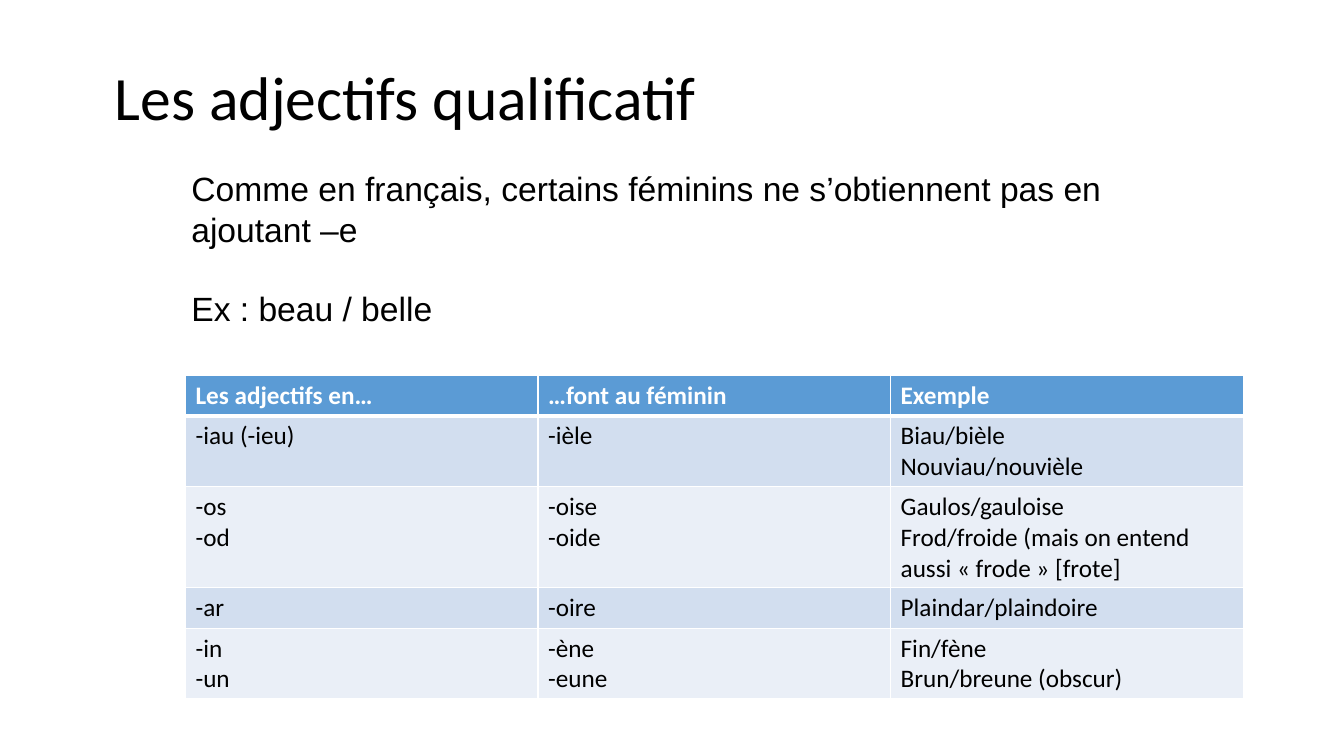
from lxml import etree
from pptx import Presentation
from pptx.dml.color import RGBColor as RGB
from pptx.enum.text import MSO_ANCHOR as ANCHOR
from pptx.oxml.ns import qn
from pptx.util import Inches, Pt

BLACK = RGB(0x00, 0x00, 0x00)
WHITE = RGB(0xFF, 0xFF, 0xFF)
BLUE = RGB(0x5B, 0x9B, 0xD5)
BANDS = (RGB(0xEA, 0xEF, 0xF7), RGB(0xD2, 0xDE, 0xEF))

TITLE = dict(name="Calibri", size=Pt(44))
BODY = dict(name="Arial", size=Pt(24))
CELL = dict(name="Calibri", size=Pt(18), bold=False)
HEAD = dict(CELL, bold=True)

ENDINGS = [
    ("Les adjectifs en…", "…font au féminin", "Exemple"),
    ("-iau (-ieu)", "-ièle", "Biau/bièle\nNouviau/nouvièle"),
    ("-os\n-od", "-oise\n-oide",
     "Gaulos/gauloise\nFrod/froide (mais on entend aussi « frode » [frote]"),
    ("-ar", "-oire", "Plaindar/plaindoire"),
    ("-in\n-un", "-ène\n-eune", "Fin/fène\nBrun/breune (obscur)"),
]


class Deck:
    """Slide builder whose lengths are percentages of the slide's size."""

    def __init__(self):
        self.prs = Presentation()
        self.prs.slide_width = Inches(13.33)
        self.prs.slide_height = Inches(7.5)
        self.s = self.prs.slides.add_slide(self.prs.slide_layouts[6])

    def box(self, x, y, w, h):
        sw, sh = self.prs.slide_width, self.prs.slide_height
        return [round(v * full / 100) for v, full in zip((x, y, w, h), (sw, sh, sw, sh))]

    def put_lines(self, tf, text, font, color, para):
        for i, line in enumerate(text.split("\n")):
            p = tf.add_paragraph() if i else tf.paragraphs[0]
            r = p.add_run()
            r.text = line
            for key, value in font.items():
                setattr(r.font, key, value)
            r.font.color.rgb = color
            for key, value in para.items():
                setattr(p, key, value)

    def text(self, at, text, font, frame, **para):
        tf = self.s.shapes.add_textbox(*self.box(*at)).text_frame
        for key, value in dict(frame, word_wrap=True).items():
            setattr(tf, key, value)
        self.put_lines(tf, text, font, BLACK, para)
        return tf

    def border(self, cell, side, width):
        ln = etree.SubElement(cell._tc.get_or_add_tcPr(), qn(f"a:ln{side}"), w=str(Pt(width)))
        fill = etree.SubElement(ln, qn("a:solidFill"))
        etree.SubElement(fill, qn("a:srgbClr"), val=str(WHITE))

    def table(self, at, rows, row_height):
        shape = self.s.shapes.add_table(len(rows), len(rows[0]), *self.box(*at))
        for i, texts in enumerate(rows):
            shape.table.rows[i].height = self.box(0, 0, 0, row_height)[3]
            for j, text in enumerate(texts):
                cell = shape.table.cell(i, j)
                for side in "LRTB":
                    thick = (i, side) in ((0, "B"), (1, "T"))
                    self.border(cell, side, 3 if thick else 1)
                cell.fill.solid()
                cell.fill.fore_color.rgb = BANDS[i % 2] if i else BLUE
                font, color = (CELL, BLACK) if i else (HEAD, WHITE)
                self.put_lines(cell.text_frame, text, font, color, {})


def main():
    deck = Deck()
    deck.text((7.8, 4.93, 86.27, 16.67), "Les adjectifs qualificatif", TITLE,
              dict(vertical_anchor=ANCHOR.MIDDLE), line_spacing=0.9)
    tf = deck.text((13.5, 21.33, 73.97, 28.27),
                   "Comme en français, certains féminins ne s’obtiennent pas en ajoutant –e\n"
                   "Ex : beau / belle",
                   BODY, dict(vertical_anchor=ANCHOR.TOP, margin_top=Inches(0.07)))
    tf.paragraphs[1].space_before = Pt(28)
    deck.table((13.8, 49.6, 78.7, 27.33), ENDINGS, 5.41)
    deck.prs.save("out.pptx")


if __name__ == "__main__":
    main()
